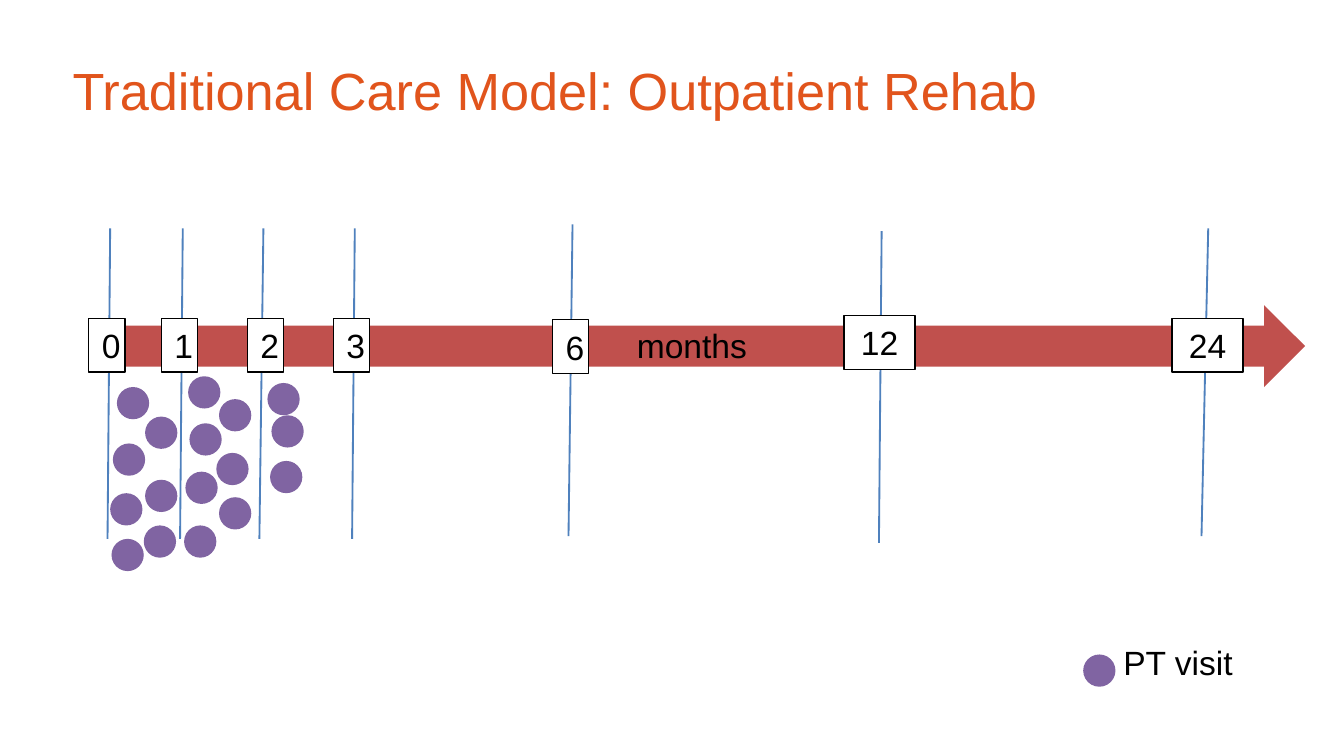
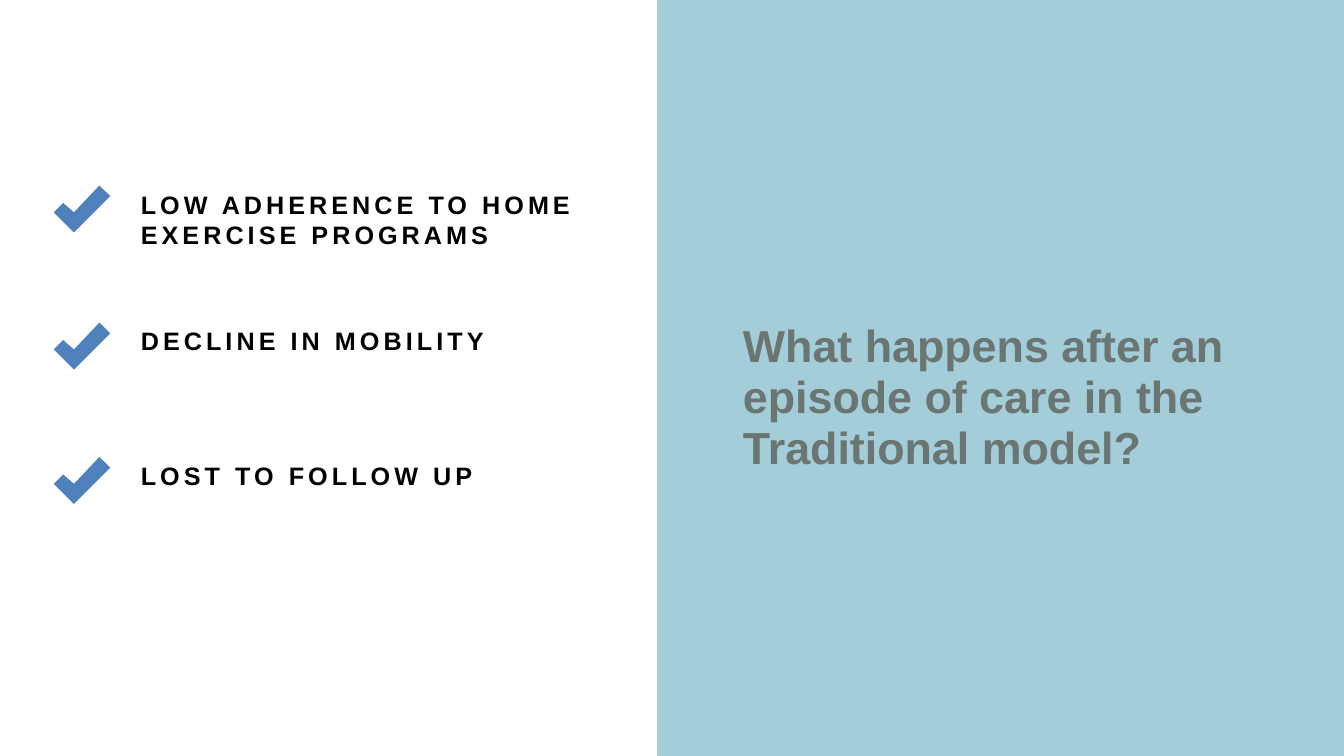
import pptx
import pptx.util
import pptx.dml.color
import pptx.enum.shapes
import pptx.enum.text
import pptx.oxml.ns
import lxml.etree

PX = 9144  # EMU per px, 100 px to the inch
SLIDE_W = 1000
SLIDE_H = SLIDE_W * 9 / 16
FONT = "Arial"
COLORS = {
    "timeline": "C0504D",
    "accent": "4F81BD",
    "visit": "8064A2",
    "title": "E1541C",
    "question": "6B7571",
    "panel": "A2CDD9",
    "text": "000000",
    "paper": "FFFFFF",
}
SHAPES = pptx.enum.shapes.MSO_SHAPE
ANCHOR = pptx.enum.text.MSO_ANCHOR
VISIT_SIZE = 24
PANEL_LEFT = 489

# Label, box (left, top, width), line (top x, top y, bottom x, bottom y)
MONTHS = [
    ("0", (66, 237, 27), (82, 170, 80, 401)),
    ("1", (120, 237, 27), (136, 170, 134, 401)),
    ("2", (184, 237, 27), (196, 170, 193, 401)),
    ("3", (248, 237, 27), (264, 170, 262, 401)),
    ("6", (411, 238, 27), (426, 167, 423, 399)),
    ("12", (628, 235, 53), (656, 172, 654, 404)),
    ("24", (872, 237, 53), (899, 170, 894, 399)),
]

# Left and top of each visit, month by month
VISITS = [
    (87, 288), (108, 310), (84, 330), (82, 367), (108, 357), (83, 401), (107, 391),
    (141, 315), (163, 297), (140, 280), (163, 370), (138, 351), (161, 337), (137, 391),
    (199, 285), (202, 309), (201, 343),
]

# Top of the check mark, top, width and height of the text, lines
OUTCOMES = [
    (138, 136, 357, 56, ["LOW ADHERENCE TO HOME", "EXERCISE PROGRAMS"]),
    (240, 237, 283, 33, ["DECLINE IN MOBILITY"]),
    (340, 338, 274, 33, ["LOST TO FOLLOW UP"]),
]
CHECK_LEFT = 40
CHECK_OUTLINE = [(34, 0), (15, 20), (7, 13), (0, 20), (15, 35), (42, 8)]


def emu(*lengths):
    return [round(length * PX) for length in lengths]


def rgb(name):
    return pptx.dml.color.RGBColor.from_string(COLORS[name])


def set_all(target, values):
    for name, value in values.items():
        setattr(target, name, value)


def paint(shape, fill, line=None):
    shape.shadow.inherit = False
    shape.fill.solid()
    shape.fill.fore_color.rgb = rgb(fill)
    if line:
        shape.line.color.rgb = rgb(line)
        shape.line.width = pptx.util.Pt(0.75)
    else:
        shape.line.fill.background()


def add_block(slide, preset, box, fill, line=None):
    shape = slide.shapes.add_shape(preset, *emu(*box))
    paint(shape, fill, line)
    return shape


def write(shape, lines, size, color="text", bold=False, spacing=None, frame=None, paragraph=None):
    text_frame = shape.text_frame
    set_all(text_frame, {
        "word_wrap": True,
        "auto_size": pptx.enum.text.MSO_AUTO_SIZE.SHAPE_TO_FIT_TEXT,
        "vertical_anchor": ANCHOR.TOP,
        **(frame or {}),
    })
    text_frame.text = "\n".join(lines)
    for line in text_frame.paragraphs:
        set_all(line, paragraph or {})
        for run in line.runs:
            set_all(run.font, {"name": FONT, "size": pptx.util.Pt(size), "bold": bold})
            run.font.color.rgb = rgb(color)
            if spacing:
                run.font._element.set("spc", str(spacing))


def add_text(slide, box, lines, size, **style):
    write(slide.shapes.add_textbox(*emu(*box)), lines, size, **style)


def add_month_line(slide, ends):
    line = slide.shapes.add_connector(pptx.enum.shapes.MSO_CONNECTOR.STRAIGHT, *emu(*ends))
    line.line.color.rgb = rgb("accent")
    line.line.width = pptx.util.Pt(1)
    lxml.etree.SubElement(line._element.spPr, pptx.oxml.ns.qn("a:effectLst"))


def add_month_box(slide, label, left, top, width):
    box = add_block(slide, SHAPES.RECTANGLE, (left, top, width, 40), "paper", "text")
    write(box, [label], 18, paragraph={"alignment": pptx.enum.text.PP_ALIGN.CENTER})


def add_visit(slide, left, top):
    add_block(slide, SHAPES.OVAL, (left, top, VISIT_SIZE, VISIT_SIZE), "visit")


def add_check(slide, top):
    points = [(CHECK_LEFT + x, top + y) for x, y in CHECK_OUTLINE]
    builder = slide.shapes.build_freeform(*points[0], scale=PX)
    builder.add_line_segments(points[1:], close=True)
    paint(builder.convert_to_shape(), "accent")


def build_care_timeline(slide):
    # Time axis
    add_block(slide, SHAPES.RIGHT_ARROW, (79, 227, 892, 61), "timeline")
    for _, _, ends in MONTHS:
        add_month_line(slide, ends)
    for label, box, _ in MONTHS:
        add_month_box(slide, label, *box)
    add_text(slide, (464, 237, 125, 40), ["months"], 18)

    # Visits
    for left, top in VISITS:
        add_visit(slide, left, top)

    # Title
    side, edge = emu(5, 3)
    add_text(slide, (49, 40, 956, 52), ["Traditional Care Model: Outpatient Rehab"], 28,
             color="title", frame={"margin_left": side, "margin_right": side,
                                   "margin_top": edge, "margin_bottom": edge})

    # Legend
    add_visit(slide, 806, 487)
    add_text(slide, (826, 473, 102, 40), ["PT visit"], 18)


def build_outcomes(slide):
    # Checklist
    for check_top, top, width, height, lines in OUTCOMES:
        add_check(slide, check_top)
        add_text(slide, (95, top, width, height), lines, 13.5, bold=True, spacing=220,
                 frame={"word_wrap": False})

    # Question panel
    add_block(slide, SHAPES.RECTANGLE, (PANEL_LEFT, 0, SLIDE_W - PANEL_LEFT, SLIDE_H), "panel")
    add_text(slide, (543, 106, 403, 252),
             ["What happens after an episode of care in the Traditional model?"], 24,
             color="question", bold=True,
             frame={"vertical_anchor": ANCHOR.BOTTOM,
                    "auto_size": pptx.enum.text.MSO_AUTO_SIZE.NONE},
             paragraph={"line_spacing": 0.95})


def main():
    deck = pptx.Presentation()
    deck.slide_width, deck.slide_height = emu(SLIDE_W, SLIDE_H)
    for build in (build_care_timeline, build_outcomes):
        build(deck.slides.add_slide(deck.slide_layouts[6]))
    deck.save("out.pptx")


if __name__ == "__main__":
    main()
